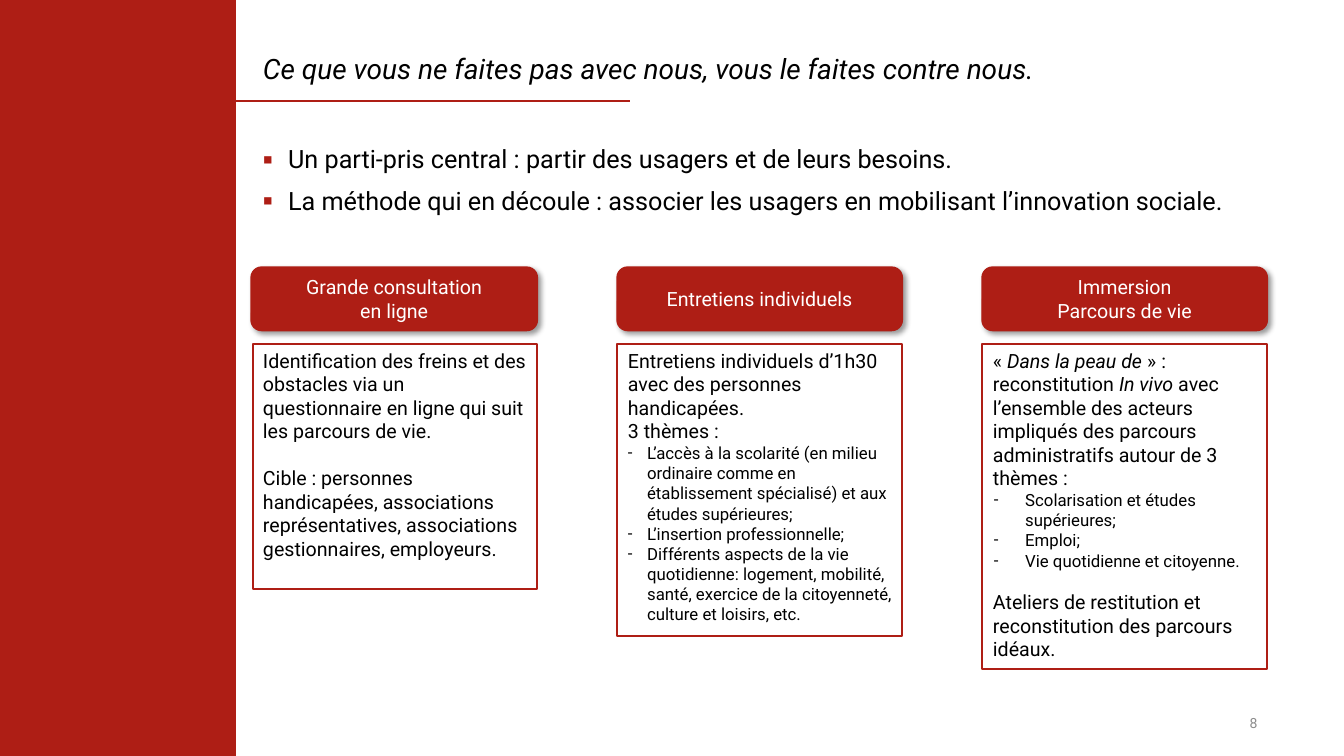
from lxml import etree
from pptx import Presentation
from pptx.dml.color import RGBColor
from pptx.enum.shapes import MSO_CONNECTOR, MSO_SHAPE
from pptx.enum.text import MSO_ANCHOR, PP_ALIGN
from pptx.oxml.ns import qn
from pptx.util import Emu, Pt

PX = 9144
RED = RGBColor(0xAE, 0x1E, 0x15)
BLACK = RGBColor(0, 0, 0)
WHITE = RGBColor(0xFF, 0xFF, 0xFF)
GREY = RGBColor(0x8C, 0x8C, 0x8C)
FONT = "Roboto"
RECT, ROUNDED = MSO_SHAPE.RECTANGLE, MSO_SHAPE.ROUNDED_RECTANGLE
STRAIGHT = MSO_CONNECTOR.STRAIGHT
TOP, MIDDLE = MSO_ANCHOR.TOP, MSO_ANCHOR.MIDDLE
LEFT, CENTER, RIGHT, JUSTIFY = PP_ALIGN.LEFT, PP_ALIGN.CENTER, PP_ALIGN.RIGHT, PP_ALIGN.JUSTIFY

HEADER_TOP, HEADER_HEIGHT = 265, 63
DETAIL_TOP = 341


def px(length):
    """Turn a length in px into EMU."""
    return Emu(length * PX)


def para(*runs, size=14, indent=(0, 0), bullet=None, before=0):
    """Describe a paragraph; each run is a text or a (text, italic) pair."""
    pairs = [(run, False) if isinstance(run, str) else run for run in runs]
    return {"runs": pairs, "size": size, "indent": indent, "bullet": bullet, "before": before}


def dash_items(texts, indent):
    """Describe a list of small paragraphs that start with a dash."""
    return [para(text, size=12, indent=indent, bullet="-") for text in texts]


def add_bullet(properties, character, color):
    """Put a coloured bullet character on a paragraph."""
    bullet_color = etree.SubElement(properties, qn("a:buClr"))
    etree.SubElement(bullet_color, qn("a:srgbClr"), val=str(color))
    etree.SubElement(properties, qn("a:buFont"), typeface=FONT)
    etree.SubElement(properties, qn("a:buChar"), char=character)


def write_text(shape, paragraphs, color=BLACK, align=LEFT, anchor=TOP, spacing=None, bullet_color=BLACK):
    """Fill a shape with paragraphs, run by run."""
    frame = shape.text_frame
    frame.word_wrap = True
    frame.vertical_anchor = anchor
    for index, content in enumerate(paragraphs):
        paragraph = frame.add_paragraph() if index else frame.paragraphs[0]
        paragraph.alignment = align
        paragraph.line_spacing = spacing
        paragraph.space_before = Pt(content["before"])
        margin, first_line = content["indent"]
        properties = paragraph._p.get_or_add_pPr()
        properties.set("marL", str(px(margin)))
        properties.set("indent", str(px(first_line)))
        if content["bullet"]:
            add_bullet(properties, content["bullet"], bullet_color)
        for text, italic in content["runs"]:
            for line_number, line in enumerate(text.split("\n")):
                if line_number:
                    paragraph.add_line_break()
                run = paragraph.add_run()
                run.text = line
                run.font.name = FONT
                run.font.size = Pt(content["size"])
                run.font.italic = italic
                run.font.color.rgb = color


def add_text(slide, box, paragraphs, **style):
    """Add a text box."""
    write_text(slide.shapes.add_textbox(*map(px, box)), paragraphs, **style)


def add_panel(slide, kind, box, fill=None, line_width=None):
    """Add a preset shape with an optional fill and red outline."""
    panel = slide.shapes.add_shape(kind, *map(px, box))
    panel.shadow.inherit = False
    if fill is None:
        panel.fill.background()
    else:
        panel.fill.solid()
        panel.fill.fore_color.rgb = fill
    if line_width is None:
        panel.line.fill.background()
    else:
        panel.line.color.rgb = RED
        panel.line.width = Pt(line_width)
    return panel


def add_shadow(panel):
    """Cast a soft black shadow to the lower right."""
    effects = panel._element.spPr.find(qn("a:effectLst"))
    shadow = etree.SubElement(
        effects, qn("a:outerShdw"), blurRad=str(Pt(4)), dist=str(Pt(3)),
        dir="2700000", algn="tl", rotWithShape="0")
    shade = etree.SubElement(shadow, qn("a:srgbClr"), val=str(BLACK))
    etree.SubElement(shade, qn("a:alpha"), val="40000")


def add_title_rule(slide):
    """Draw the red line under the title."""
    rule = slide.shapes.add_connector(STRAIGHT, px(234), px(100), px(625), px(100))
    rule.line.color.rgb = RED
    rule.line.width = Pt(1.5)
    etree.SubElement(rule._element.spPr, qn("a:effectLst"))


def add_method(slide, left, width, heading, detail_left, detail_height, details):
    """Add one method: a red heading above an outlined description."""
    header = add_panel(slide, ROUNDED, (left, HEADER_TOP, width, HEADER_HEIGHT), RED, 1)
    add_shadow(header)
    write_text(header, [para(line) for line in heading], color=WHITE, align=CENTER, anchor=MIDDLE)
    detail_width = left + width - detail_left
    detail = add_panel(slide, RECT, (detail_left, DETAIL_TOP, detail_width, detail_height), line_width=1.5)
    write_text(detail, details)


def main():
    """Build the slide and save it."""
    deck = Presentation()
    deck.slide_width, deck.slide_height = px(1333), px(750)
    slide = deck.slides.add_slide(deck.slide_layouts[6])

    add_panel(slide, RECT, (0, 0, 234, 750), RED)
    add_title_rule(slide)
    motto = "Ce que vous ne faites pas avec nous, vous le faites contre nous."
    add_text(slide, (251, 40, 1008, 60), [para((motto, True), size=20)],
             align=JUSTIFY, anchor=MIDDLE, spacing=0.9)
    principles = [
        "Un parti-pris central : partir des usagers et de leurs besoins.",
        "La méthode qui en découle : associer les usagers en mobilisant l’innovation sociale.",
    ]
    add_text(slide, (251, 141, 1008, 93),
             [para(text, size=18, indent=(25, -25), bullet="▪", before=10) for text in principles],
             align=JUSTIFY, spacing=0.9, bullet_color=RED)
    add_text(slide, (957, 697, 300, 40), [para("8", size=10)], color=GREY, align=RIGHT, anchor=MIDDLE)

    consultation = [
        para("Identification des freins et des obstacles via un questionnaire en ligne "
             "qui suit les parcours de vie."),
        para("Cible : personnes handicapées, associations représentatives, "
             "associations gestionnaires, employeurs.", before=16.5),
    ]
    interviews = [
        para("Entretiens individuels d’1h30 avec des personnes handicapées.\n3 thèmes :", indent=(1, 0)),
        *dash_items([
            "L’accès à la scolarité (en milieu ordinaire comme en établissement spécialisé) "
            "et aux études supérieures;",
            "L’insertion professionnelle;",
            "Différents aspects de la vie quotidienne: logement, mobilité, santé, "
            "exercice de la citoyenneté, culture et loisirs, etc.",
        ], (20, -19)),
    ]
    immersion = [
        para("« ", ("Dans la peau de", True), " » : reconstitution ", ("In vivo ", True),
             "avec l’ensemble des acteurs impliqués des parcours administratifs autour de 3 thèmes :",
             indent=(1, 0)),
        *dash_items([
            "Scolarisation et études supérieures;",
            "Emploi;",
            "Vie quotidienne et citoyenne.",
        ], (33, -31)),
        para("Ateliers de restitution et reconstitution des parcours idéaux.", indent=(1, 0), before=14),
    ]
    add_method(slide, 249, 284, ["Grande consultation\nen ligne"], 251, 243, consultation)
    add_method(slide, 612, 283, ["Entretiens individuels"], 612, 290, interviews)
    add_method(slide, 974, 283, ["Immersion", "Parcours de vie"], 974, 323, immersion)

    deck.save("out.pptx")


if __name__ == "__main__":
    main()
